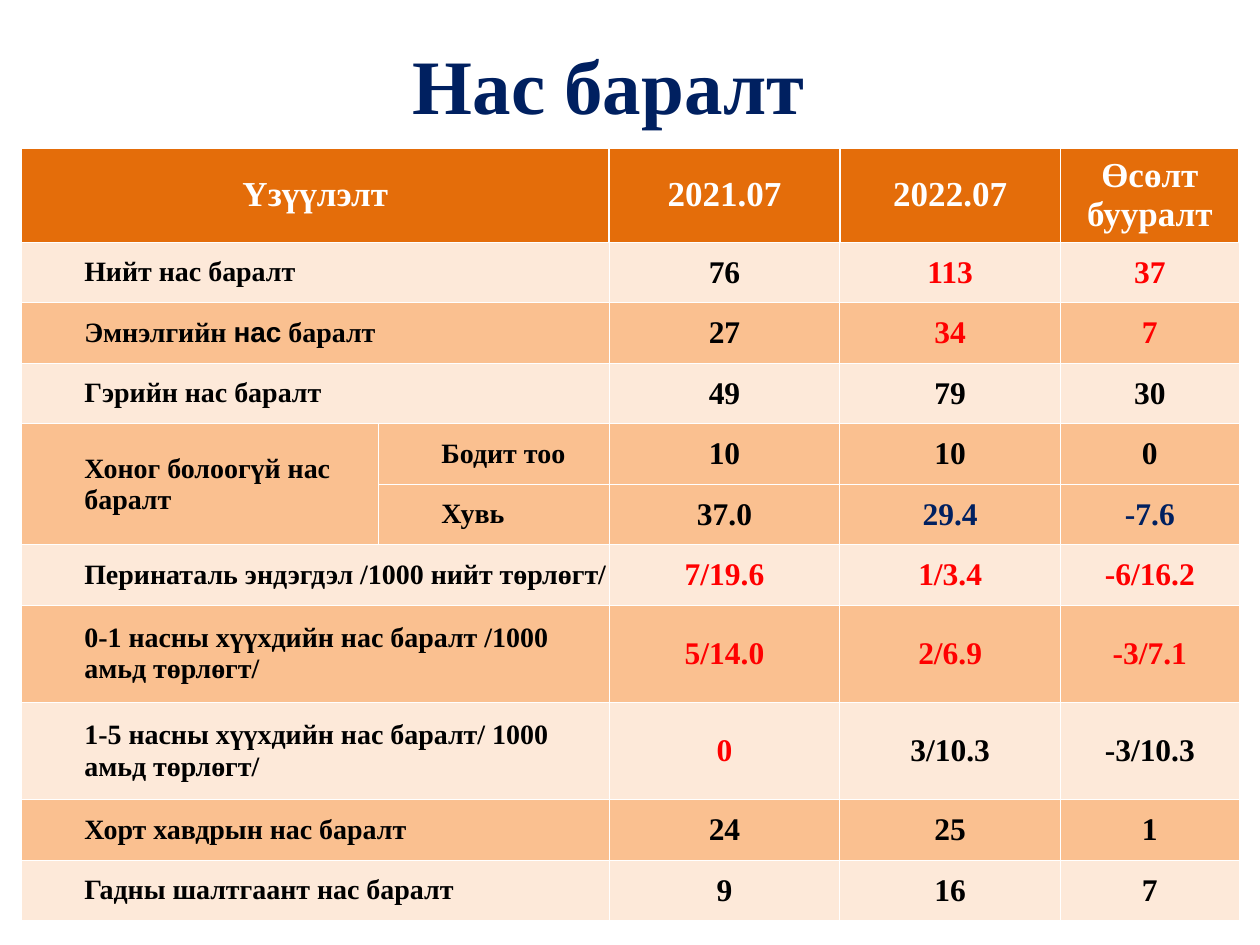
from dataclasses import dataclass
from lxml import etree
from pptx import Presentation
from pptx.dml.color import RGBColor
from pptx.enum.text import MSO_ANCHOR, PP_ALIGN
from pptx.oxml.ns import qn
from pptx.util import Cm, Pt

MID = MSO_ANCHOR.MIDDLE
LEFT, CENTER = PP_ALIGN.LEFT, PP_ALIGN.CENTER

WHITE = RGBColor(0xFF, 0xFF, 0xFF)
BLACK = RGBColor(0, 0, 0)
RED = RGBColor(0xFF, 0, 0)
NAVY = RGBColor(0, 0x20, 0x60)
HEAD = RGBColor(0xE4, 0x6D, 0x0A)
PALE = RGBColor(0xFD, 0xE9, 0xD9)
PEACH = RGBColor(0xFA, 0xC0, 0x90)

SERIF, SANS = "Times New Roman", "Arial"
COLS = (7.2, 4.65, 4.65, 4.45, 3.6)
TOP, SHORT, TALL = 1.9, 1.22, 1.96
FLAT = {"margin_left": 0, "margin_top": 0, "margin_right": 0,
        "margin_bottom": 0, "vertical_anchor": MID}


@dataclass
class Row:
    label: str  # "|" switches between the serif and the sans font
    values: tuple[str, str, str]
    inks: tuple[RGBColor, RGBColor, RGBColor] = (BLACK,) * 3
    fill: RGBColor = PALE
    high: float = SHORT
    sub: str = ""


REDS = (RED,) * 3
ROWS = (
    Row("Нийт нас баралт", ("76", "113", "37"), (BLACK, RED, RED)),
    Row("Эмнэлгийн |нас| баралт", ("27", "34", "7"), (BLACK, RED, RED), PEACH),
    Row("Гэрийн нас баралт", ("49", "79", "30")),
    Row("Хоног болоогүй нас баралт", ("10", "10", "0"), fill=PEACH, sub="Бодит тоо"),
    Row("", ("37.0", "29.4", "-7.6"), (BLACK, NAVY, NAVY), PEACH, sub="Хувь"),
    Row("Перинаталь эндэгдэл /1000 нийт төрлөгт/", ("7/19.6", "1/3.4", "-6/16.2"), REDS),
    Row("0-1 насны хүүхдийн нас баралт /1000 амьд төрлөгт/",
        ("5/14.0", "2/6.9", "-3/7.1"), REDS, PEACH, TALL),
    Row("1-5 насны хүүхдийн нас баралт/ 1000 амьд төрлөгт/",
        ("0", "3/10.3", "-3/10.3"), (RED, BLACK, BLACK), PALE, TALL),
    Row("Хорт хавдрын нас баралт", ("24", "25", "1"), fill=PEACH),
    Row("Гадны шалтгаант нас баралт", ("9", "16", "7")),
)
HEADS = ("2021.07", "2022.07", "Өсөлт бууралт")


def write(frame, text: str, size: int, ink: RGBColor, align=CENTER) -> None:
    para = frame.paragraphs[0]
    para.alignment = align
    for i, part in enumerate(text.split("|")):
        run = para.add_run()
        run.text = part
        run.font.color.rgb = ink
        look = {"name": (SERIF, SANS)[i % 2], "size": Pt(size), "bold": True}
        for key, val in look.items():
            setattr(run.font, key, val)


def label(cell, text: str) -> None:
    write(cell.text_frame, text, 16, BLACK, LEFT)
    para = cell.text_frame.paragraphs[0]
    para.level = 1
    props = para._p.get_or_add_pPr()
    props.set("marL", str(int(Cm(1.27))))
    props.set("indent", "0")


def style(cell, fill: RGBColor, thick: str) -> None:
    """Set margins, white borders (1 pt on the thick sides) and fill."""
    for key, val in FLAT.items():
        setattr(cell, key, val)
    props = cell._tc.get_or_add_tcPr()
    for side in "LRTB":
        line = etree.SubElement(props, qn(f"a:ln{side}"))
        line.set("w", str(int(Pt(1 if side in thick else 0.5))))
        solid = etree.SubElement(line, qn("a:solidFill"))
        etree.SubElement(solid, qn("a:srgbClr")).set("val", str(WHITE))
    cell.fill.solid()
    cell.fill.fore_color.rgb = fill


def main() -> None:
    deck = Presentation()
    deck.slide_width, deck.slide_height = Cm(25.4), Cm(19.05)
    slide = deck.slides.add_slide(deck.slide_layouts[6])

    # Title
    box = slide.shapes.add_textbox(Cm(1.9), Cm(0.64), Cm(20.75), Cm(2.1))
    box.text_frame.word_wrap = True
    box.text_frame.vertical_anchor = MID
    write(box.text_frame, "Нас баралт", 44, NAVY)

    # Table grid
    highs = (TOP, *(row.high for row in ROWS))
    grid = slide.shapes.add_table(len(highs), len(COLS), Cm(0.43), Cm(2.98),
                                  Cm(sum(COLS)), Cm(sum(highs))).table
    for col, wide in zip(grid.columns, COLS):
        col.width = Cm(wide)
    for line, high in zip(grid.rows, highs):
        line.height = Cm(high)

    # Header
    for c in range(len(COLS)):
        style(grid.cell(0, c), HEAD, "LRT")
    grid.cell(0, 0).merge(grid.cell(0, 1))
    write(grid.cell(0, 0).text_frame, "Үзүүлэлт", 20, WHITE)
    for c, text in enumerate(HEADS, 2):
        write(grid.cell(0, c).text_frame, text, 20, WHITE)

    # Body
    for r, row in enumerate(ROWS, 1):
        for c in range(len(COLS)):
            thick = {0: "R", 1: "L"}.get(c, "") if row.sub else ""
            style(grid.cell(r, c), row.fill, thick)
        first = grid.cell(r, 0)
        if row.sub:
            label(grid.cell(r, 1), row.sub)
            if row.label:
                first.merge(grid.cell(r + 1, 0))
        else:
            first.merge(grid.cell(r, 1))
        if row.label:
            label(first, row.label)
        for c, (text, ink) in enumerate(zip(row.values, row.inks), 2):
            write(grid.cell(r, c).text_frame, text, 18, ink)

    deck.save("out.pptx")


if __name__ == "__main__":
    main()
